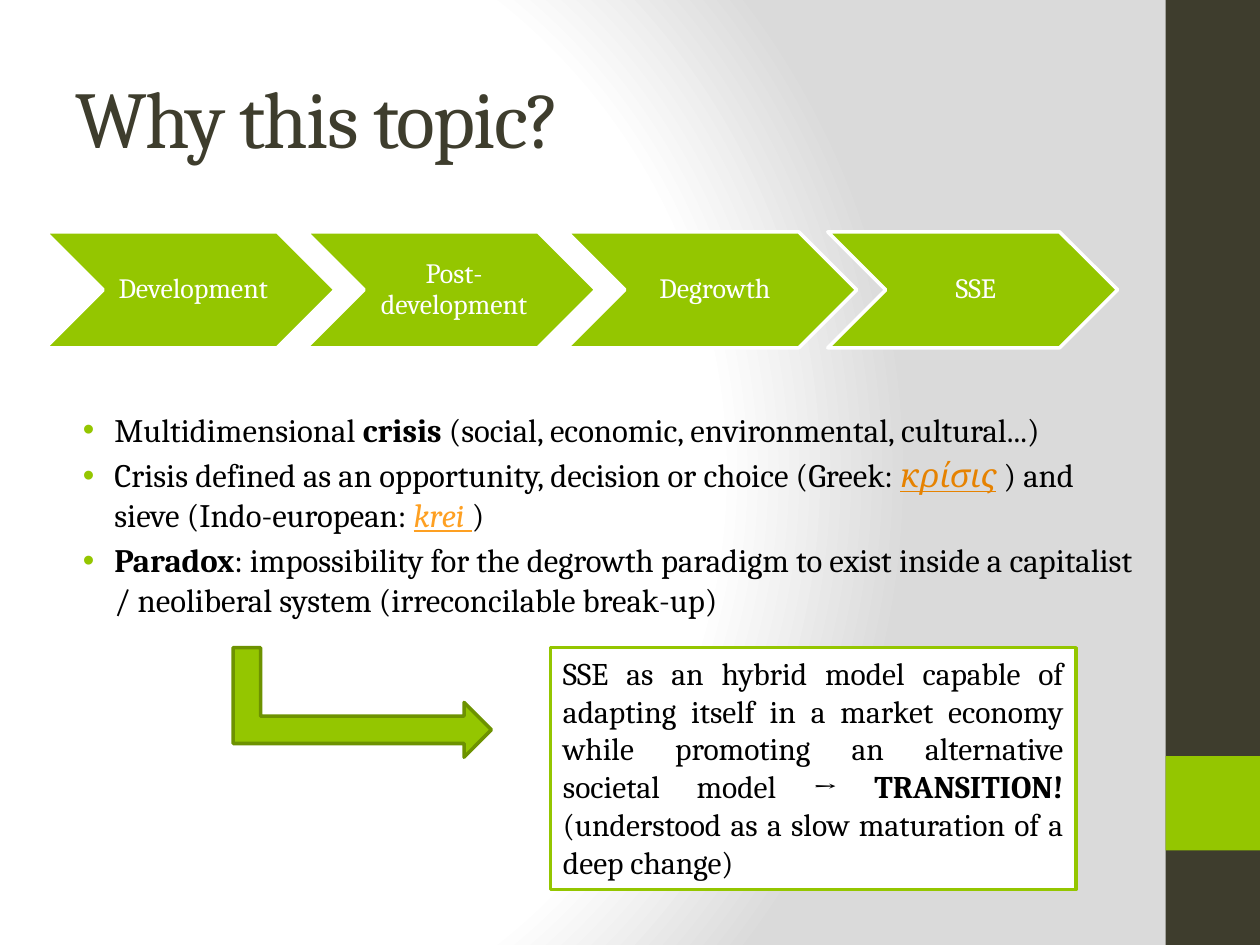
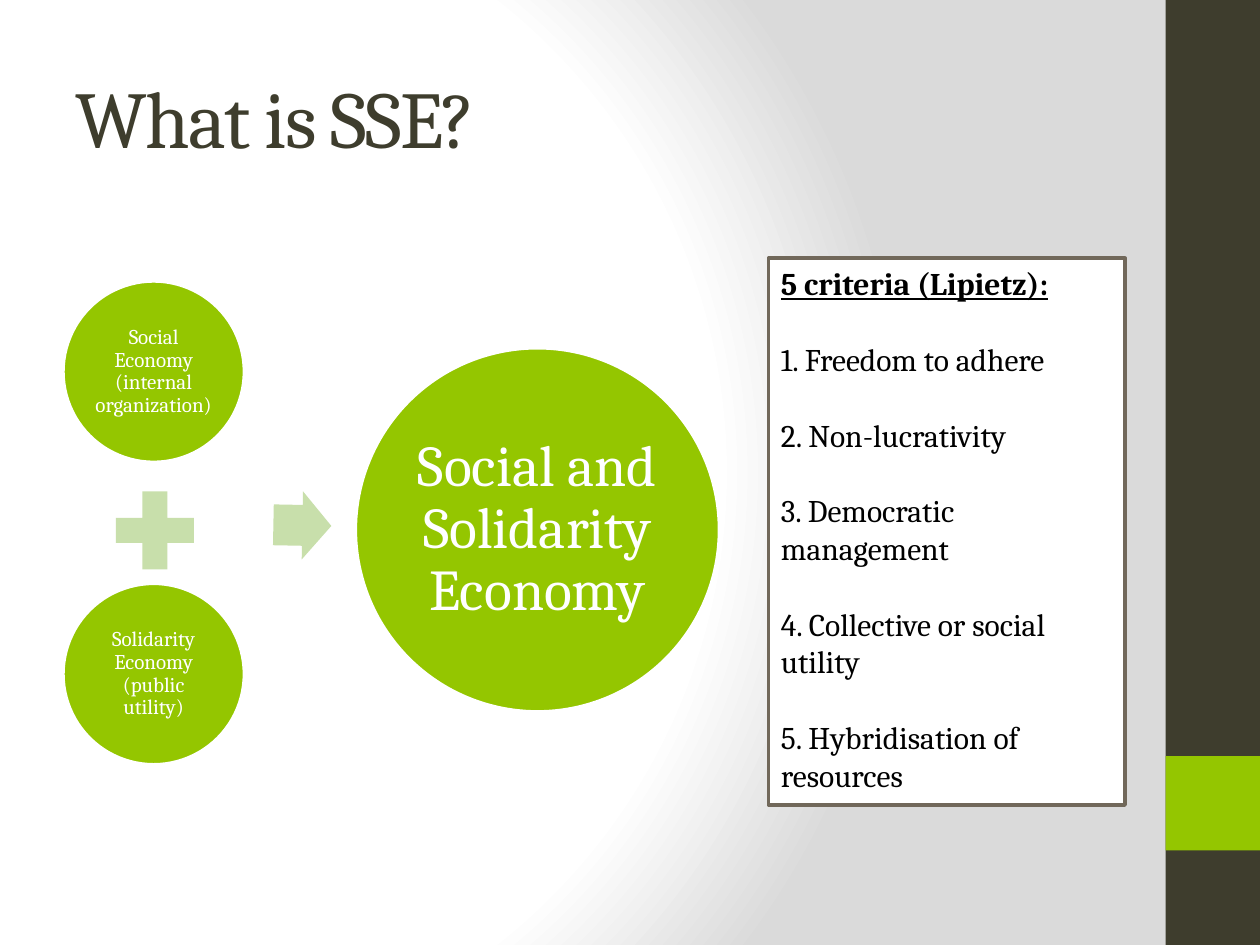
from dataclasses import dataclass
from typing import Any, NamedTuple, Optional

from pptx import Presentation
from pptx.dml.color import RGBColor
from pptx.enum.shapes import MSO_SHAPE as Preset
from pptx.enum.text import MSO_ANCHOR as Anchor, PP_ALIGN as Align
from pptx.oxml import parse_xml
from pptx.oxml.ns import nsdecls, qn
from pptx.util import Inches, Pt


@dataclass(frozen=True)
class Theme:
    font: str = "Cambria"
    green: str = "94C600"
    dark_green: str = "6D9200"
    pale_green: str = "C8DFAB"
    dark: str = "3E3D2D"
    taupe: str = "71685A"
    white: str = "FFFFFF"
    grey: str = "DADADA"
    black: str = "000000"
    orange: str = "FEA022"
    deep_orange: str = "E68200"
    title_size: float = 46
    bullet_size: float = 18.7
    box_size: float = 18
    step_size: float = 16
    circle_size: float = 12
    result_size: float = 33
    line_width: float = 2


THEME = Theme()
BOLD = {"bold": True}
LINK = {"italic": True, "underline": True}


class Span(NamedTuple):
    text: str
    form: dict[str, Any] = {}
    color: str = THEME.black


class Place(NamedTuple):
    left: float
    top: float
    width: float
    height: float

    def lengths(self) -> list[int]:
        return [Inches(value) for value in self]


@dataclass(frozen=True)
class Figure:
    preset: Preset
    place: Place
    fill: str = THEME.green
    line: Optional[str] = None
    turn: float = 0
    adjustments: tuple[float, ...] = ()


@dataclass(frozen=True)
class Label:
    text: str
    place: Place
    size: float
    margins: tuple[float, float, float, float]


BANDS = (
    Figure(Preset.RECTANGLE, Place(9.25, 0, 0.75, 7.5), THEME.dark),
    Figure(Preset.RECTANGLE, Place(9.25, 6, 0.75, 0.75)),
)
STEPS = ("Development", "Post-development", "Degrowth", "SSE")
STEP_PITCH = 2.07
BULLETS = (
    (
        Span("Multidimensional "),
        Span("crisis", BOLD),
        Span(" (social, economic, environmental, cultural...)"),
    ),
    (
        Span("Crisis defined as an opportunity, decision or choice (Greek: "),
        Span("κρίσις", LINK, THEME.deep_orange),
        Span(" ) and sieve (Indo-european: "),
        Span("krei ", LINK, THEME.orange),
        Span(")"),
    ),
    (
        Span("Paradox", BOLD),
        Span(": impossibility for the degrowth paradigm to exist inside "
             "a capitalist / neoliberal system (irreconcilable break-up)"),
    ),
)
HYBRID_MODEL = (
    Span("SSE as an hybrid model capable of adapting itself in a market economy "
         "while promoting an alternative societal model → "),
    Span("TRANSITION! ", BOLD),
    Span("(understood as a slow maturation of a deep change)"),
)
CRITERIA = (
    "Freedom to adhere",
    "Non-lucrativity",
    "Democratic management",
    "Collective or social utility",
    "Hybridisation of resources",
)
SMALL_MARGINS = (0.02, 0.02, 0.02, 0.02)
CIRCLES = (
    Label("Social Economy (internal organization)", Place(0.5, 2.23, 1.44, 1.44),
          THEME.circle_size, SMALL_MARGINS),
    Label("Solidarity Economy (public utility)", Place(0.5, 4.63, 1.44, 1.44),
          THEME.circle_size, SMALL_MARGINS),
    Label("Social and Solidarity Economy", Place(2.82, 2.76, 2.89, 2.89),
          THEME.result_size, (0.05, 0.05, 0.05, 0.05)),
)
SIGNS = (
    Figure(Preset.MATH_PLUS, Place(0.81, 3.79, 0.84, 0.84), THEME.pale_green),
    Figure(Preset.RIGHT_ARROW, Place(2.17, 3.9, 0.46, 0.54), THEME.pale_green,
           turn=1.1, adjustments=(0.6, 0.5)),
)


def apply(target: Any, values: dict[str, Any]) -> None:
    for name, value in values.items():
        setattr(target, name, value)


def write(para: Any, spans: tuple[Span, ...], size: float, **layout: Any) -> None:
    apply(para, layout)
    for span in spans:
        run = para.add_run()
        run.text = span.text
        apply(run.font, {"name": THEME.font, "size": Pt(size), **span.form})
        run.font.color.rgb = RGBColor.from_string(span.color)


def draw(page: Any, figure: Figure) -> Any:
    shape = page.shapes.add_shape(figure.preset, *figure.place.lengths())
    shape.shadow.inherit = False
    shape.rotation = figure.turn
    for index, value in enumerate(figure.adjustments):
        shape.adjustments[index] = value
    shape.fill.solid()
    shape.fill.fore_color.rgb = RGBColor.from_string(figure.fill)
    if figure.line:
        shape.line.color.rgb = RGBColor.from_string(figure.line)
        shape.line.width = Pt(THEME.line_width)
    else:
        shape.line.fill.background()
    return shape


def draw_label(page: Any, preset: Preset, label: Label) -> None:
    frame = draw(page, Figure(preset, label.place, line=THEME.white)).text_frame
    sides = ("margin_left", "margin_top", "margin_right", "margin_bottom")
    apply(frame, {side: Inches(m) for side, m in zip(sides, label.margins)})
    apply(frame, {"word_wrap": True, "vertical_anchor": Anchor.MIDDLE})
    write(frame.paragraphs[0], (Span(label.text, color=THEME.white),), label.size,
          alignment=Align.CENTER, line_spacing=0.9)


def draw_panel(page: Any, place: Place, line: str) -> Any:
    panel = draw(page, Figure(Preset.RECTANGLE, place, THEME.white, line))
    apply(panel.text_frame, {"word_wrap": True, "vertical_anchor": Anchor.TOP})
    return panel.text_frame


def add_bullet(para: Any) -> None:
    settings = para._p.get_or_add_pPr()
    settings.set("marL", str(Inches(0.38)))
    settings.set("indent", str(Inches(-0.25)))
    for xml in (
        f'<a:buClr {nsdecls("a")}><a:srgbClr val="{THEME.green}"/></a:buClr>',
        f'<a:buFont {nsdecls("a")} typeface="Arial"/>',
        f'<a:buChar {nsdecls("a")} char="•"/>',
    ):
        settings.append(parse_xml(xml))


def style_background(master: Any) -> None:
    master.background.fill.gradient()
    gradient = master.element.find(".//" + qn("a:gradFill"))
    stops = "".join(
        f'<a:gs pos="{position * 1000}"><a:srgbClr val="{color}"/></a:gs>'
        for position, color in ((0, THEME.white), (75, THEME.white), (100, THEME.grey))
    )
    gradient.getparent().replace(gradient, parse_xml(
        f'<a:gradFill {nsdecls("a")} rotWithShape="1"><a:gsLst>{stops}</a:gsLst>'
        '<a:path path="circle"><a:fillToRect l="20000" t="50000" r="100000" '
        'b="50000"/></a:path></a:gradFill>'
    ))


def move_bands_to_master(page: Any, master: Any) -> None:
    for index, band in enumerate(BANDS):
        master.shapes.element.insert(2 + index, draw(page, band).element)


def add_page(deck: Any, heading: str) -> Any:
    page = deck.slides.add_slide(deck.slide_layouts.get_by_name("Title Only"))
    title = page.shapes.title
    apply(title, dict(zip(Place._fields, Place(0.5, 0.3, 8.33, 1.25).lengths())))
    title.text_frame.vertical_anchor = Anchor.MIDDLE
    para = title.text_frame.paragraphs[0]
    write(para, (Span(heading, color=THEME.dark),), THEME.title_size,
          alignment=Align.LEFT)
    para.runs[0]._r.get_or_add_rPr().set("spc", "-100")
    return page


def fill_topic_page(page: Any) -> None:
    box = page.shapes.add_textbox(*Place(0.43, 3.2, 8.66, 1.97).lengths())
    frame = box.text_frame
    frame.word_wrap = True
    for index, spans in enumerate(BULLETS):
        para = frame.add_paragraph() if index else frame.paragraphs[0]
        write(para, spans, THEME.bullet_size, space_before=Pt(3.7))
        add_bullet(para)
    for index, step in enumerate(STEPS):
        place = Place(0.36 + index * STEP_PITCH, 1.84, 2.3, 0.92)
        draw_label(page, Preset.CHEVRON,
                   Label(step, place, THEME.step_size, (0.07, 0.02, 0.02, 0.02)))
    draw(page, Figure(Preset.BENT_UP_ARROW, Place(2.44, 4.55, 0.87, 2.05),
                      line=THEME.dark_green, turn=90))
    panel = draw_panel(page, Place(4.37, 5.14, 4.17, 1.92), THEME.green)
    write(panel.paragraphs[0], HYBRID_MODEL, THEME.box_size, alignment=Align.JUSTIFY)


def fill_definition_page(page: Any) -> None:
    for circle in CIRCLES:
        draw_label(page, Preset.OVAL, circle)
    for sign in SIGNS:
        draw(page, sign)
    panel = draw_panel(page, Place(6.1, 2.05, 2.83, 4.34), THEME.taupe)
    heading = Span("5 criteria (Lipietz):", {"bold": True, "underline": True})
    write(panel.paragraphs[0], (heading,), THEME.box_size, alignment=Align.LEFT)
    for number, criterion in enumerate(CRITERIA, 1):
        write(panel.add_paragraph(), (Span(f"{number}. {criterion}"),), THEME.box_size,
              alignment=Align.LEFT, space_before=Pt(21.6))


def main() -> None:
    deck = Presentation()
    apply(deck, {"slide_width": Inches(10), "slide_height": Inches(7.5)})
    style_background(deck.slide_master)
    topic_page = add_page(deck, "Why this topic?")
    move_bands_to_master(topic_page, deck.slide_master)
    fill_topic_page(topic_page)
    fill_definition_page(add_page(deck, "What is SSE?"))
    deck.save("out.pptx")


if __name__ == "__main__":
    main()
